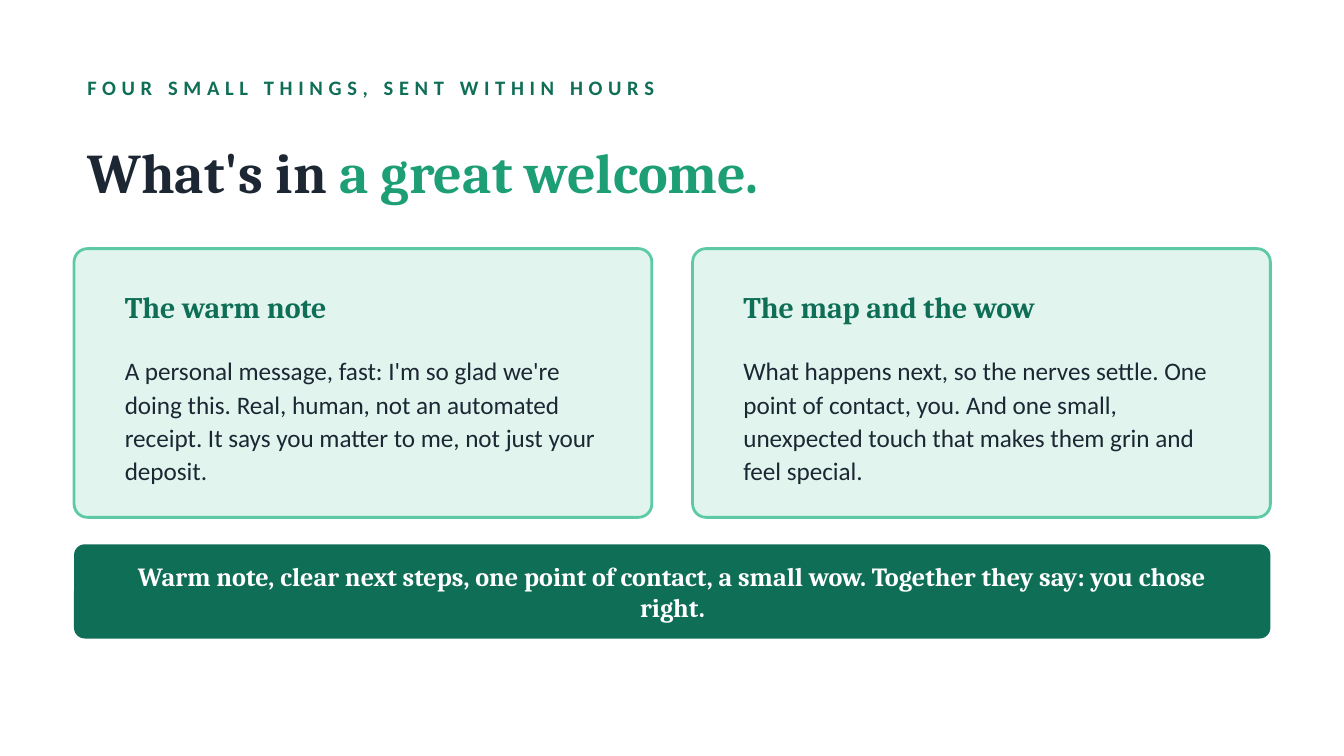
from pptx import Presentation
from pptx.dml.color import RGBColor
from pptx.enum.shapes import MSO_SHAPE as Shape
from pptx.enum.text import MSO_ANCHOR as Anchor, MSO_AUTO_SIZE as AutoSize, PP_ALIGN as Align
from pptx.util import Cm, Pt

SERIF, SANS = "Cambria", "Calibri"
INK, GREEN, BRIGHT = "1C2733", "0F6E56", "1D9E75"
MINT, BORDER, WHITE = "E1F5EE", "5DCAA5", "FFFFFF"

LEFT, WIDTH = 1.4, 22.61
CARD_WIDTH, CARD_HEIGHT = 10.92, 5.08
CARDS = [
    ("The warm note",
     "A personal message, fast: I'm so glad we're doing this. Real, human, not an "
     "automated receipt. It says you matter to me, not just your deposit."),
    ("The map and the wow",
     "What happens next, so the nerves settle. One point of contact, you. And one "
     "small, unexpected touch that makes them grin and feel special."),
]


def color(hex_string):
    return RGBColor.from_string(hex_string)


def format_run(run, font, size, hex_string, bold=True):
    run.font.name = font
    run.font.size = Pt(size)
    run.font.bold = bold
    run.font.color.rgb = color(hex_string)


def add_text(slide, box, text, font, size, hex_string, bold=True, align=Align.LEFT):
    text_frame = slide.shapes.add_textbox(*map(Cm, box)).text_frame
    text_frame.word_wrap = True
    text_frame.vertical_anchor = Anchor.MIDDLE
    text_frame.text = text
    paragraph = text_frame.paragraphs[0]
    paragraph.alignment = align
    format_run(paragraph.runs[0], font, size, hex_string, bold)
    return paragraph


def add_panel(slide, box, fill, rounding, line=None):
    shape = slide.shapes.add_shape(Shape.ROUNDED_RECTANGLE, *map(Cm, box))
    shape.adjustments[0] = rounding
    shape.shadow.inherit = False
    shape.fill.solid()
    shape.fill.fore_color.rgb = color(fill)
    if line:
        shape.line.color.rgb = color(line)
        shape.line.width = Pt(1.5)
    else:
        shape.line.fill.background()


def add_header(slide, left, top, width):
    # Letter-spaced line above the title
    eyebrow = add_text(slide, (left, top, width, 0.76),
                       "FOUR SMALL THINGS, SENT WITHIN HOURS", SANS, 11, GREEN)
    eyebrow.runs[0].font._element.set("spc", "300")

    # Two-tone title
    title = slide.shapes.title
    title.left, title.top = Cm(left), Cm(top + 0.89)
    title.width, title.height = Cm(width), Cm(2.16)
    text_frame = title.text_frame
    text_frame.auto_size = AutoSize.NONE
    text_frame.vertical_anchor = Anchor.MIDDLE
    paragraph = text_frame.paragraphs[0]
    paragraph.alignment = Align.LEFT
    for text, hex_string in (("What's in ", INK), ("a great welcome.", BRIGHT)):
        run = paragraph.add_run()
        run.text = text
        format_run(run, SERIF, 30, hex_string)


def add_card(slide, left, top, width, height, heading, body):
    add_panel(slide, (left, top, width, height), MINT, 0.05, BORDER)
    text_left, text_width = left + 0.71, width - 1.27
    add_text(slide, (text_left, top + 0.46, text_width, 1.27), heading, SERIF, 16, GREEN)
    paragraph = add_text(slide, (text_left, top + 1.83, text_width, 2.79),
                         body, SANS, 13.5, INK, bold=False)
    paragraph.line_spacing = 1.1


def add_banner(slide, left, top, width, height):
    add_panel(slide, (left, top, width, height), GREEN, 0.114)
    add_text(slide, (left + 0.64, top, width - 1.27, height),
             "Warm note, clear next steps, one point of contact, a small wow. "
             "Together they say: you chose right.", SERIF, 14, WHITE, align=Align.CENTER)


def main():
    presentation = Presentation()
    presentation.slide_width, presentation.slide_height = Cm(25.4), Cm(14.29)
    slide = presentation.slides.add_slide(presentation.slide_layouts[5])
    slide.background.fill.solid()
    slide.background.fill.fore_color.rgb = color(WHITE)

    add_header(slide, LEFT, 1.27, WIDTH)
    # Cards span the content width, first and last flush with its edges
    step = (WIDTH - CARD_WIDTH) / (len(CARDS) - 1)
    for index, (heading, body) in enumerate(CARDS):
        add_card(slide, LEFT + index * step, 4.7, CARD_WIDTH, CARD_HEIGHT, heading, body)
    add_banner(slide, LEFT, 10.29, WIDTH, 1.78)
    presentation.save("out.pptx")


if __name__ == "__main__":
    main()
